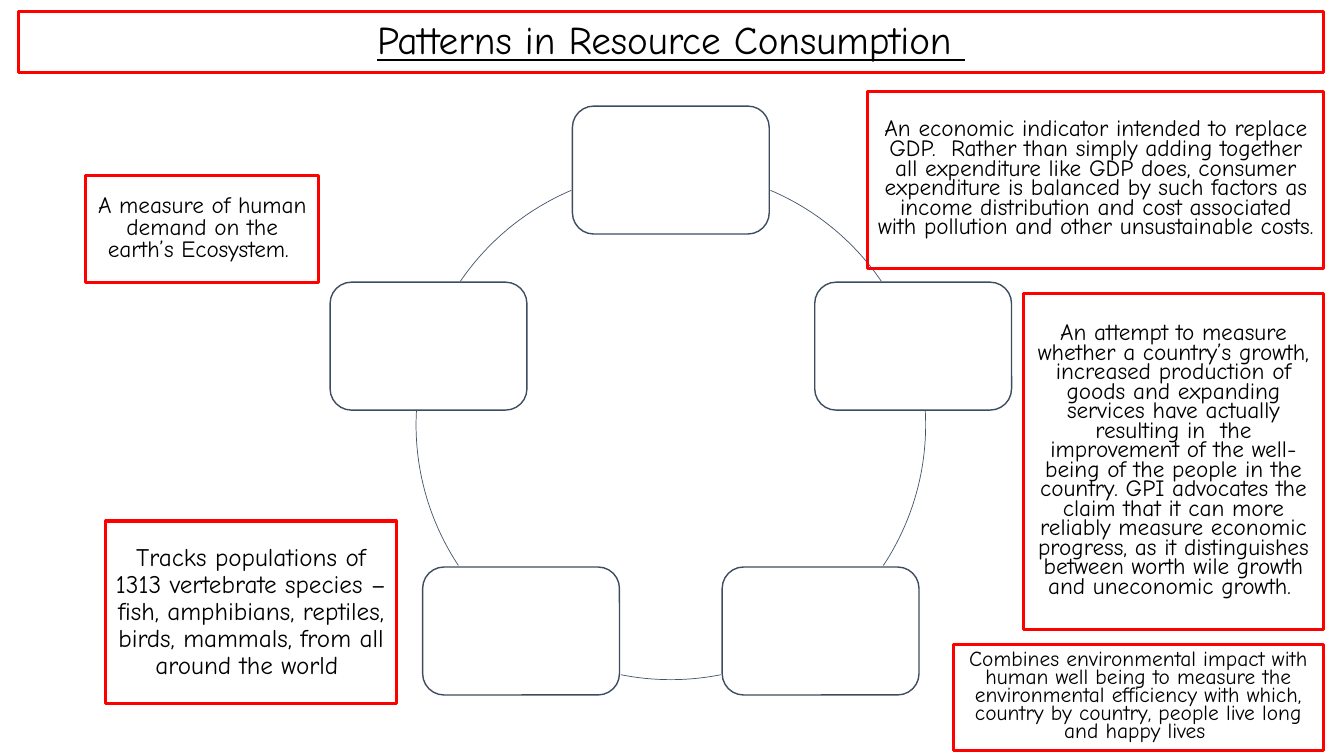
import math

import pptx
import pptx.dml.color
import pptx.enum.shapes
import pptx.enum.text
import pptx.util

Pt = pptx.util.Pt
SHAPE = pptx.enum.shapes.MSO_SHAPE

COLORS = {"frame": "FF0000", "text": "000000", "node": "FFFFFF",
          "node_line": "3E4C60", "ring": "44546A"}


class SlideWriter:
    font_name = "Comic Neue"

    def __init__(self, page):
        self.page = page

    def color(self, name):
        return pptx.dml.color.RGBColor.from_string(COLORS[name])

    def outlined(self, kind, left, top, width, height, line, weight):
        """Unfilled preset shape with a plain outline."""
        box = self.page.shapes.add_shape(kind, Pt(left), Pt(top), Pt(width), Pt(height))
        box.shadow.inherit = False
        box.fill.background()
        box.line.color.rgb = self.color(line)
        box.line.width = Pt(weight)
        return box

    def text_frame(self, bounds, text, size, spacing, underline=False):
        box = self.outlined(SHAPE.RECTANGLE, *bounds, "frame", 2.25)
        frame = box.text_frame
        frame.word_wrap = True
        frame.vertical_anchor = pptx.enum.text.MSO_ANCHOR.MIDDLE
        para = frame.paragraphs[0]
        para.alignment = pptx.enum.text.PP_ALIGN.CENTER
        para.line_spacing = spacing
        span = para.add_run()
        span.text = text
        span.font.name = self.font_name
        span.font.size = Pt(size)
        span.font.underline = underline
        span.font.color.rgb = self.color("text")

    def node(self, center_x, center_y, width, height):
        box = self.outlined(SHAPE.ROUNDED_RECTANGLE, center_x - width / 2,
                            center_y - height / 2, width, height, "node_line", 1)
        box.fill.solid()
        box.fill.fore_color.rgb = self.color("node")

    def ring_arc(self, center_x, center_y, radius, start, end):
        """Arc between two angles, in degrees clockwise from the top."""
        arc = self.outlined(SHAPE.ARC, center_x - radius, center_y - radius,
                            2 * radius, 2 * radius, "ring", 0.5)
        # Angles are stored in 1/60000 degree, adjustments in 1/100000
        for index, angle in enumerate((start, end)):
            arc.adjustments[index] = (angle - 90) % 360 * 0.6


def main():
    deck = pptx.Presentation()
    deck.slide_width, deck.slide_height = Pt(960), Pt(540)
    writer = SlideWriter(deck.slides.add_slide(deck.slide_layouts[6]))

    # Title
    writer.text_frame((13, 8, 932.4, 44), "Patterns in Resource Consumption ",
                      28, 0.9, underline=True)

    # Ring of five empty nodes joined by arcs
    center_x, center_y, radius = 479.2, 303.5, 182
    arcs = [(23, 55.7), (86.9, 123.5), (168.7, 191.3), (236.5, 273.1), (304.3, 337)]
    for index, (start, end) in enumerate(arcs):
        angle = math.radians(72 * index)
        writer.node(center_x + radius * math.sin(angle),
                    center_y - radius * math.cos(angle), 140.6, 91.4)
        writer.ring_arc(center_x, center_y, radius, start, end)

    # Definitions around the ring: bounds, text, size, line spacing
    definitions = [
        ((61.2, 125.3, 166.3, 76.3),
         "A measure of human demand on the earth’s Ecosystem. ", 16.6, 0.8),
        ((75.6, 372.2, 207.4, 130.3),
         "Tracks populations of 1313 vertebrate species –fish, amphibians, "
         "reptiles, birds, mammals, from all around the world ", 18, 0.9),
        ((619.9, 65.5, 325.4, 126),
         "An economic indicator intended to replace GDP.  Rather than simply "
         "adding together all expenditure like GDP does, consumer expenditure is "
         "balanced by such factors as income distribution and cost associated "
         "with pollution and other unsustainable costs. ", 16.6, 0.7),
        ((681.1, 460.1, 264.2, 76.3),
         "Combines environmental impact with human well being to measure the "
         "environmental efficiency with which, country by country, people live "
         "long and happy lives ", 15.3, 0.7),
        ((730.8, 209.5, 214.6, 240.5),
         "An attempt to measure whether a country’s growth, increased production "
         "of goods and expanding services have actually resulting in  the "
         "improvement of the well-being of the people in the country. GPI "
         "advocates the claim that it can more reliably measure economic "
         "progress, as it distinguishes between worth wile growth and "
         "uneconomic growth. ", 16.6, 0.7),
    ]
    for bounds, text, size, spacing in definitions:
        writer.text_frame(bounds, text, size, spacing)

    deck.save("out.pptx")


if __name__ == "__main__":
    main()
